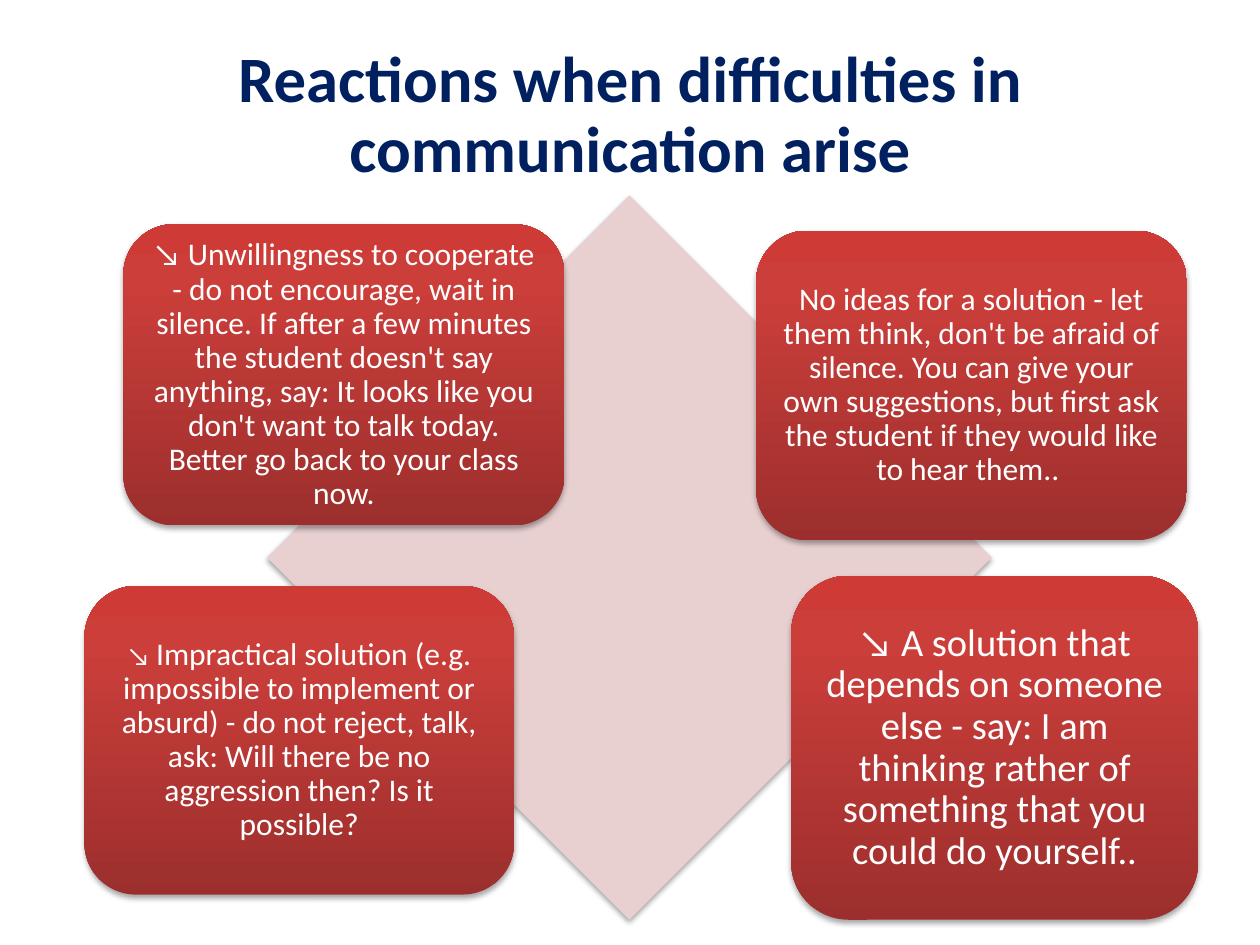
import copy

import lxml.etree
import pptx
import pptx.dml.color
import pptx.enum.shapes
import pptx.enum.text
import pptx.oxml.ns
import pptx.util

Inches = pptx.util.Inches
Pt = pptx.util.Pt
RGBColor = pptx.dml.color.RGBColor
Shapes = pptx.enum.shapes.MSO_SHAPE
qn = pptx.oxml.ns.qn

NAVY = RGBColor(0x00, 0x20, 0x60)
WHITE = RGBColor(0xFF, 0xFF, 0xFF)
BLACK = RGBColor(0x00, 0x00, 0x00)
PALE_RED = RGBColor(0xE8, 0xD0, 0xD0)
RED_STOPS = (
    (0, RGBColor(0x9C, 0x2F, 0x2D)),
    (0.8, RGBColor(0xCB, 0x3E, 0x3A)),
    (1, RGBColor(0xCE, 0x3B, 0x37)),
)

CARDS = (
    ((0.98, 1.78, 3.5, 2.39), 0.12, 0.07, [
        ("↘ Unwillingness to cooperate - do not encourage, wait in silence. "
         "If after a few minutes the student doesn't say anything, say: "
         "It looks like you don't want to talk today. "
         "Better go back to your class now.", 18)]),
    ((6, 1.83, 3.42, 2.46), 0.12, 0.07, [
        ("No ideas for a solution - let them think, don't be afraid of silence. "
         "You can give your own suggestions, but first ask the student "
         "if they would like to hear them.. ", 18)]),
    ((0.67, 4.65, 3.41, 2.45), 0.12, 0.06, [
        ("↘ ", 15),
        ("Impractical solution (e.g. impossible to implement or absurd) - "
         "do not reject, talk, ask: Will there be no aggression then? "
         "Is it possible?", 18)]),
    ((6.28, 4.57, 3.23, 2.73), 0.13, 0.09, [
        ("↘ A solution that depends on someone else - say: I am thinking "
         "rather of something that you could do yourself..", 22)]),
)


class SlideBuilder:
    """Draws the slide's elements in one shared style."""

    font = "Calibri"
    line_spacing = 0.9
    space_after = 0.35

    def __init__(self, slide):
        self.slide = slide

    def shape(self, kind, box):
        shape = self.slide.shapes.add_shape(kind, *map(Inches, box))
        shape.line.fill.background()
        self.add_shadow(shape)
        return shape

    def add_shadow(self, shape):
        shape.shadow.inherit = False
        effects = shape._element.spPr.find(qn("a:effectLst"))
        shadow = lxml.etree.SubElement(
            effects, qn("a:outerShdw"), blurRad=str(Pt(3.1)), dist=str(Pt(1.8)),
            dir="5400000", rotWithShape="0")
        color = lxml.etree.SubElement(shadow, qn("a:srgbClr"), val=str(BLACK))
        lxml.etree.SubElement(color, qn("a:alpha"), val="35000")

    def diamond(self, box):
        shape = self.shape(Shapes.DIAMOND, box)
        shape.fill.solid()
        shape.fill.fore_color.rgb = PALE_RED

    def text(self, box, runs, color, inset=None, bold=False, space_after=0):
        frame = self.slide.shapes.add_textbox(*map(Inches, box)).text_frame
        frame.word_wrap = True
        frame.vertical_anchor = pptx.enum.text.MSO_ANCHOR.MIDDLE
        if inset is not None:
            frame.margin_left = frame.margin_right = Inches(inset)
            frame.margin_top = frame.margin_bottom = Inches(inset)
        paragraph = frame.paragraphs[0]
        paragraph.alignment = pptx.enum.text.PP_ALIGN.CENTER
        paragraph.line_spacing = self.line_spacing
        paragraph.space_after = Pt(space_after)
        for words, size in runs:
            run = paragraph.add_run()
            run.text = words
            run.font.name = self.font
            run.font.size = Pt(size)
            run.font.bold = bold
            run.font.color.rgb = color

    def card(self, box, margin, inset, runs):
        shape = self.shape(Shapes.ROUNDED_RECTANGLE, box)
        shape.fill.gradient()
        shape.fill.gradient_angle = 90
        stop_list = next(shape._element.spPr.iter(qn("a:gsLst")))
        stop_list.append(copy.deepcopy(stop_list[-1]))
        for stop, (position, color) in zip(shape.fill.gradient_stops, RED_STOPS):
            stop.position = position
            stop.color.rgb = color
        left, top, width, height = box
        text_box = (left + margin, top + margin,
                    width - 2 * margin, height - 2 * margin)
        self.text(text_box, runs, WHITE, inset,
                  space_after=runs[-1][1] * self.space_after)


def main():
    presentation = pptx.Presentation()
    presentation.slide_width = Inches(10)
    presentation.slide_height = Inches(7.5)
    builder = SlideBuilder(
        presentation.slides.add_slide(presentation.slide_layouts[6]))
    builder.text(
        (0.5, 0.3, 9, 1.25),
        [("Reactions when difficulties in communication arise", 37)],
        NAVY, bold=True)
    builder.diamond((2.12, 1.55, 5.75, 5.75))
    for card in CARDS:
        builder.card(*card)
    presentation.save("out.pptx")


if __name__ == "__main__":
    main()
